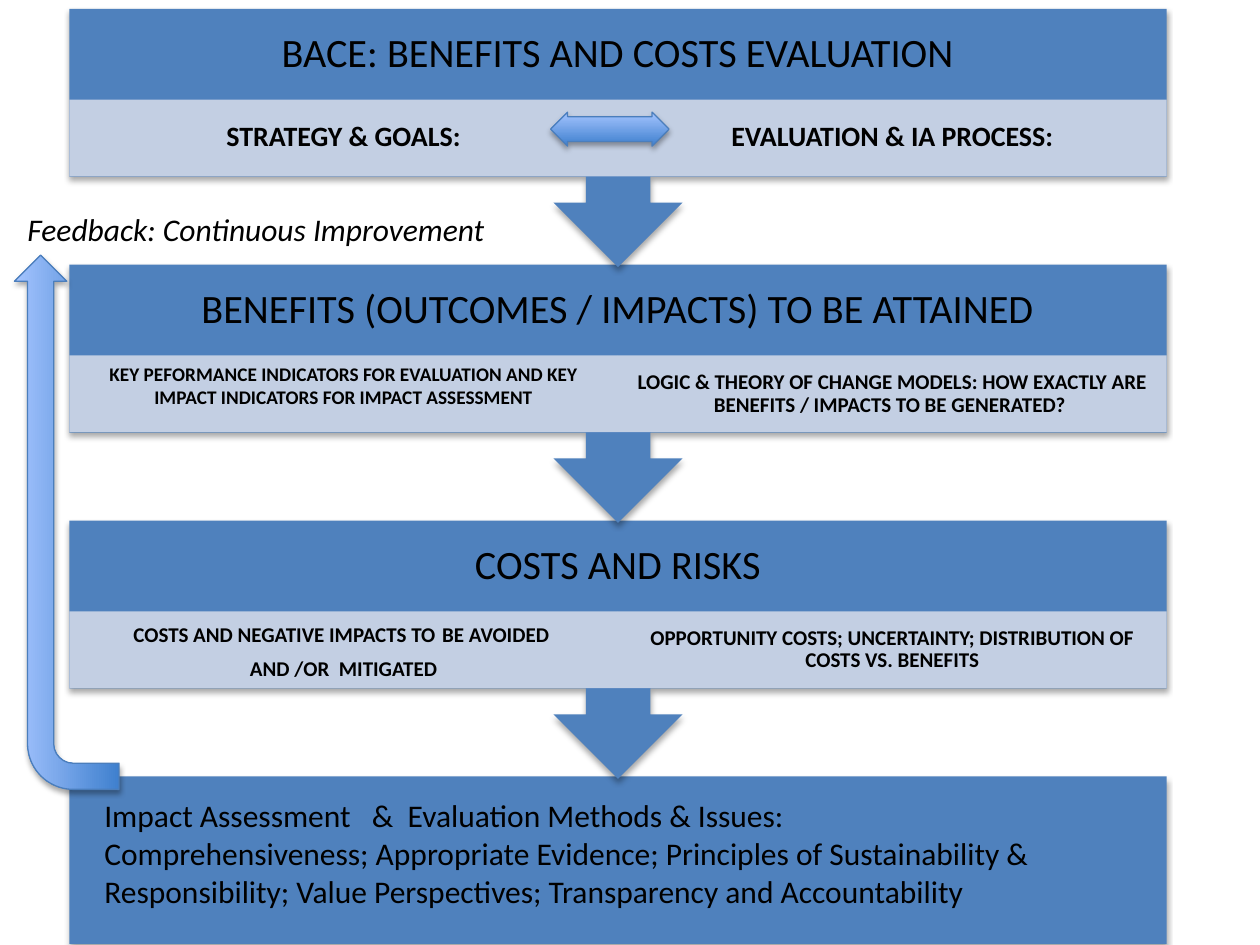
import pptx
import pptx.util
import pptx.dml.color
import pptx.enum.shapes
import pptx.enum.text
import pptx.oxml
import pptx.oxml.ns

SLIDE = (pptx.util.Inches(10), pptx.util.Inches(7.5))
SHAPE = pptx.enum.shapes.MSO_SHAPE
ALIGN = pptx.enum.text.PP_ALIGN
ANCHOR = pptx.enum.text.MSO_ANCHOR
COLOURS = {
    "block": "4F81BD", "panel": "D0D8E8", "text": "000000",
    "arrow_dark": "3F80CE", "arrow_light": "A4C4FF", "arrow_edge": "4B7EBC",
}
LEFT, WIDTH = 5.5, 87.1
TOP, PITCH, BLOCK_HEIGHT = 0.93, 27.08, 27.33
TITLE_HEIGHT, PANEL_HEIGHT, LAST_HEIGHT = 9.6, 8.13, 17.73

STAGES = [
    ("BACE: BENEFITS AND COSTS EVALUATION", [
        ([[("STRATEGY & GOALS:", 16)]], 0.9, 0.02),
        ([[("EVALUATION & IA PROCESS:", 16)]], 0.9, 0.02),
    ]),
    ("BENEFITS (OUTCOMES / IMPACTS) TO BE ATTAINED", [
        ([[("KEY PEFORMANCE INDICATORS FOR EVALUATION AND KEY IMPACT INDICATORS "
            "FOR IMPACT ASSESSMENT", 11)]], 1.0, 0.15),
        ([[("LOGIC & THEORY OF CHANGE MODELS: HOW EXACTLY ARE BENEFITS / IMPACTS "
            "TO BE GENERATED? ", 12)]], 0.9, 0.02),
    ]),
    ("COSTS AND RISKS", [
        ([[("COSTS AND NEGATIVE IMPACTS TO", 12), (" ", 16), ("BE AVOIDED ", 12)],
          [("AND /OR  MITIGATED", 12)]], 0.9, 0.02),
        ([[("OPPORTUNITY COSTS; UNCERTAINTY; DISTRIBUTION OF COSTS VS. BENEFITS",
            12)]], 0.9, 0.02),
    ]),
]
METHODS = [
    [("Impact Assessment   &  Evaluation Methods & Issues:", 18)],
    [("Comprehensiveness; Appropriate Evidence; Principles of Sustainability & "
      "Responsibility; Value Perspectives; Transparency and Accountability", 18)],
]


def colour(name):
    """Return the named colour."""
    return pptx.dml.color.RGBColor.from_string(COLOURS[name])


def place(left, top, width, height):
    """Turn percentages of the slide into lengths."""
    return [round(share / 100 * SLIDE[index % 2])
            for index, share in enumerate((left, top, width, height))]


def add_shadow(shape):
    """Give a shape a soft shadow that falls straight down."""
    shape.shadow.inherit = False
    effects = shape._element.spPr.find(pptx.oxml.ns.qn("a:effectLst"))
    effects.append(pptx.oxml.parse_xml(
        f'<a:outerShdw {pptx.oxml.ns.nsdecls("a")} blurRad="40000" dist="23000" '
        'dir="5400000" rotWithShape="0"><a:srgbClr val="000000">'
        '<a:alpha val="35000"/></a:srgbClr></a:outerShdw>'))


def add_block(page, kind, area, rotation=0):
    """Add a plain blue block with a shadow."""
    block = page.shapes.add_shape(kind, *place(*area))
    block.rotation = rotation
    block.fill.solid()
    block.fill.fore_color.rgb = colour("block")
    block.line.fill.background()
    add_shadow(block)


def add_panel(page, area):
    """Add a slightly transparent pale panel."""
    panel = page.shapes.add_shape(SHAPE.RECTANGLE, *place(*area))
    panel.shadow.inherit = False
    panel.fill.solid()
    panel.fill.fore_color.rgb = colour("panel")
    panel.line.fill.background()
    tint = panel._element.spPr.find(".//" + pptx.oxml.ns.qn("a:srgbClr"))
    tint.append(pptx.oxml.parse_xml(
        f'<a:alpha {pptx.oxml.ns.nsdecls("a")} val="90000"/>'))
    return panel


def add_arrow(page, kind, area, rotation=0):
    """Add a block arrow with a gradient from dark to light."""
    arrow = page.shapes.add_shape(kind, *place(*area))
    arrow.rotation = rotation
    arrow.fill.gradient()
    arrow.fill.gradient_angle = 90
    for stop, name in zip(arrow.fill.gradient_stops, ("arrow_dark", "arrow_light")):
        stop.color.rgb = colour(name)
    arrow.line.color.rgb = colour("arrow_edge")
    arrow.line.width = pptx.util.Pt(0.75)
    add_shadow(arrow)
    return arrow


def set_insets(frame, side, top, bottom):
    """Set the inner margins of a text frame in inches."""
    frame.margin_left = frame.margin_right = pptx.util.Inches(side)
    frame.margin_top = pptx.util.Inches(top)
    frame.margin_bottom = pptx.util.Inches(bottom)


def write(frame, paras, align, spacing=1.0, gap=0, bold=False, italic=False):
    """Fill a text frame with paragraphs, run by run."""
    for index, runs in enumerate(paras):
        para = frame.add_paragraph() if index else frame.paragraphs[0]
        para.alignment = align
        para.line_spacing = spacing
        para.space_after = pptx.util.Pt(gap if index < len(paras) - 1 else 0)
        for text, size in runs:
            span = para.add_run()
            span.text = text
            span.font.name = "Calibri"
            span.font.size = pptx.util.Pt(size)
            span.font.bold = bold
            span.font.italic = italic
            span.font.color.rgb = colour("text")


def add_text(page, area, wrap=True):
    """Add an empty text box and return its frame."""
    frame = page.shapes.add_textbox(*place(*area)).text_frame
    frame.word_wrap = wrap
    return frame


def add_stage(page, row, title, panels):
    """Add one stage: a callout block, its title and two panels."""
    top = TOP + row * PITCH
    add_block(page, SHAPE.UP_ARROW_CALLOUT, (LEFT, top, WIDTH, BLOCK_HEIGHT), 180)
    frame = add_text(page, (LEFT, top, WIDTH, TITLE_HEIGHT))
    frame.vertical_anchor = ANCHOR.MIDDLE
    set_insets(frame, 0.18, 0.18, 0.18)
    write(frame, [[(title, 23)]], ALIGN.CENTER, 0.9)
    half = WIDTH / 2
    for column, (paras, spacing, bottom) in enumerate(panels):
        panel = add_panel(page, (LEFT + column * half, top + TITLE_HEIGHT,
                                 half, PANEL_HEIGHT))
        frame = panel.text_frame
        frame.word_wrap = True
        frame.vertical_anchor = ANCHOR.MIDDLE
        set_insets(frame, 0.09, 0.02, bottom)
        write(frame, paras, ALIGN.CENTER, spacing, gap=6, bold=True)


def main():
    """Build the slide and save it."""
    deck = pptx.Presentation()
    deck.slide_width, deck.slide_height = SLIDE
    page = deck.slides.add_slide(deck.slide_layouts[6])
    add_block(page, SHAPE.RECTANGLE, (LEFT, TOP + 3 * PITCH, WIDTH, LAST_HEIGHT))
    for row, (title, panels) in reversed(list(enumerate(STAGES))):
        add_stage(page, row, title, panels)
    write(add_text(page, (7.3, 83.6, 83.8, 16.4)), METHODS, ALIGN.LEFT)
    exchange = add_arrow(page, SHAPE.LEFT_RIGHT_ARROW, (43.7, 11.87, 9.4, 3.6))
    exchange.adjustments[0] = 0.73
    write(add_text(page, (1.2, 21.6, 43.3, 5.33), wrap=False),
          [[("Feedback: Continuous Improvement", 18)]], ALIGN.LEFT, italic=True)
    add_arrow(page, SHAPE.BENT_ARROW, (-15.9, 49.73, 42.4, 11.07), 270)
    deck.save("out.pptx")


if __name__ == "__main__":
    main()
